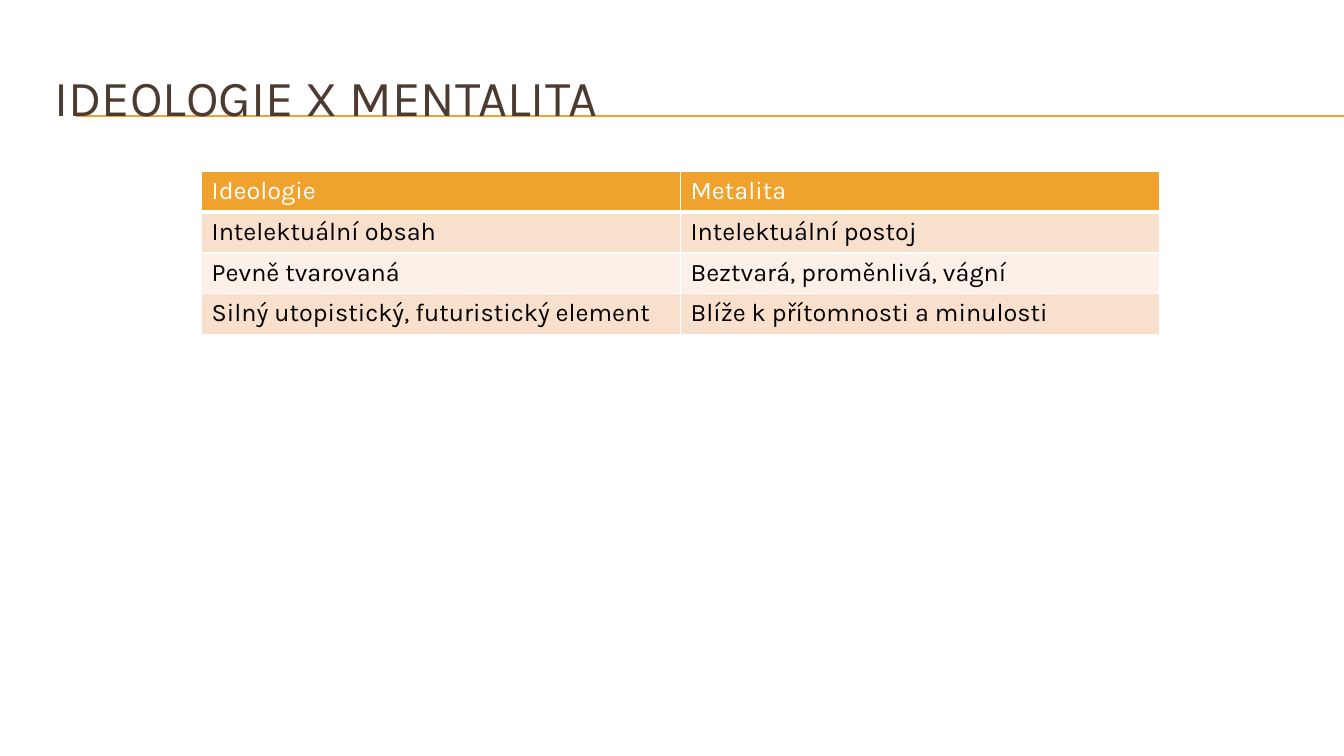
"""Build a slide that compares ideology and mentality in a table."""
from lxml import etree
from pptx import Presentation
from pptx.dml.color import RGBColor
from pptx.enum.shapes import MSO_CONNECTOR
from pptx.enum.text import MSO_ANCHOR, PP_ALIGN
from pptx.oxml.ns import qn
from pptx.util import Inches, Pt

LINE = MSO_CONNECTOR.STRAIGHT
MIDDLE = MSO_ANCHOR.MIDDLE
LEFT = PP_ALIGN.LEFT

TITLE = "IDEOLOGIE X MENTALITA"
ROWS = [
    ("Ideologie", "Metalita"),
    ("Intelektuální obsah", "Intelektuální postoj"),
    ("Pevně tvarovaná", "Beztvará, proměnlivá, vágní"),
    ("Silný utopistický, futuristický element", "Blíže k přítomnosti a minulosti"),
]
FONT = "Karla"
GOLD, BROWN, WHITE, BLACK = "F0A22E", "4E3B30", "FFFFFF", "000000"
BANDS = ("FCF0E8", "F9E0CD")
WIDTH, HEIGHT = 13.33, 7.5
RULES = (1.15, 1.16)
ROW, COL = 0.405, 4.75


def color(text):
    return RGBColor.from_string(text)


def style(par, size, tint):
    for run in par.runs:
        font = run.font
        font.name, font.size, font.bold = FONT, Pt(size), False
        font.color.rgb = color(tint)


def border(cell, base):
    props = cell._tc.get_or_add_tcPr()
    for side, width in (("L", 1), ("R", 1), ("T", 1), ("B", base)):
        edge = etree.SubElement(props, qn(f"a:ln{side}"), w=str(Pt(width)))
        fill = etree.SubElement(edge, qn("a:solidFill"))
        etree.SubElement(fill, qn("a:srgbClr"), val=WHITE)


def add_rule(slide, top):
    rule = slide.shapes.add_connector(
        LINE, Inches(0.75), Inches(top), Inches(WIDTH), Inches(top))
    rule.line.color.rgb = color(GOLD)
    rule.line.width = Pt(0.75)
    etree.SubElement(rule._element.spPr, qn("a:effectLst"))


def set_title(slide):
    title = slide.shapes.title
    title.left, title.top = Inches(0.44), Inches(0.5)
    title.width, title.height = Inches(12.67), Inches(0.92)
    frame = title.text_frame
    frame.text = TITLE
    frame.word_wrap = True
    frame.vertical_anchor = MIDDLE
    frame.paragraphs[0].alignment = LEFT
    style(frame.paragraphs[0], 36, BROWN)
    slide.shapes._spTree.append(title._element)


def add_grid(slide):
    cols = len(ROWS[0])
    table = slide.shapes.add_table(
        len(ROWS), cols, Inches(2), Inches(1.7),
        Inches(COL * cols), Inches(ROW * len(ROWS))).table
    for r, row in enumerate(ROWS):
        head = r == 0
        for c, text in enumerate(row):
            cell = table.cell(r, c)
            cell.text_frame.text = text
            style(cell.text_frame.paragraphs[0], 18, WHITE if head else BLACK)
            border(cell, 3 if head else 1)
            cell.fill.solid()
            cell.fill.fore_color.rgb = color(GOLD if head else BANDS[r % 2])


def main():
    deck = Presentation()
    deck.slide_width, deck.slide_height = Inches(WIDTH), Inches(HEIGHT)
    slide = deck.slides.add_slide(deck.slide_layouts[5])
    for top in RULES:
        add_rule(slide, top)
    set_title(slide)
    add_grid(slide)
    deck.save("out.pptx")


if __name__ == "__main__":
    main()
